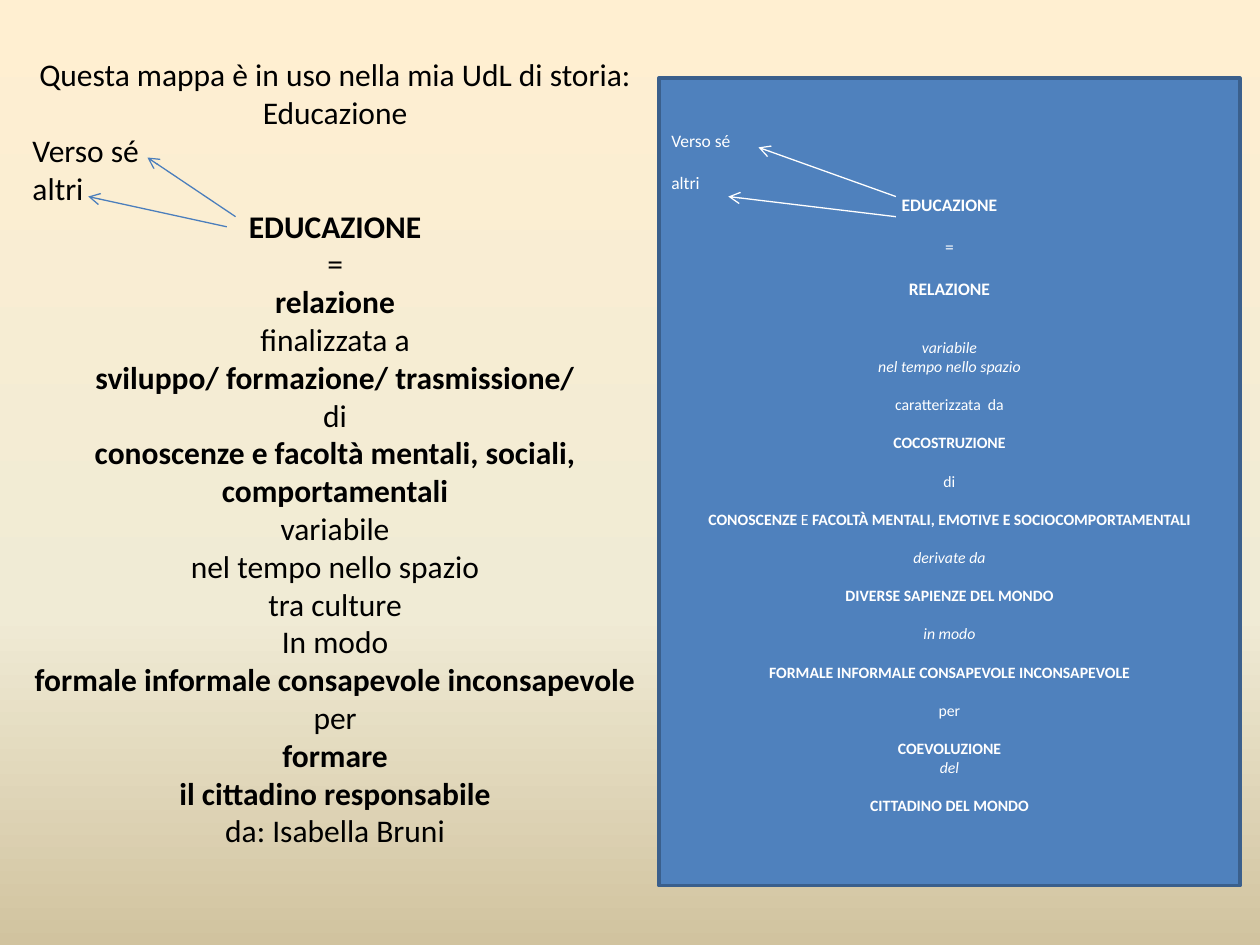
from copy import deepcopy
from dataclasses import dataclass

from lxml import etree
from pptx import Presentation
from pptx.dml.color import RGBColor
from pptx.enum.shapes import MSO_CONNECTOR, MSO_SHAPE
from pptx.enum.text import MSO_ANCHOR, MSO_AUTO_SIZE, PP_ALIGN
from pptx.oxml.ns import qn
from pptx.util import Inches, Pt

LEFT, CENTER = PP_ALIGN.LEFT, PP_ALIGN.CENTER
MIDDLE = MSO_ANCHOR.MIDDLE
FIT_SHAPE = MSO_AUTO_SIZE.SHAPE_TO_FIT_TEXT
RECTANGLE = MSO_SHAPE.RECTANGLE
STRAIGHT = MSO_CONNECTOR.STRAIGHT


@dataclass(frozen=True)
class Theme:
    font: str = "Calibri"
    ink: str = "000000"
    panel_ink: str = "FFFFFF"
    panel_fill: str = "4F81BD"
    panel_border: str = "3A5F8C"
    arrow: str = "4B7EBC"
    background: tuple = ((0, "FFEFD1"), (0.65, "F0EBD5"), (1, "D1C39F"))
    map_size: float = 18
    heading_size: float = 10
    detail_size: float = 9
    heading_gap: float = 12.2
    detail_gap: float = 11
    section_gap: float = 22


THEME = Theme()


@dataclass(frozen=True)
class Line:
    text: str
    bold: bool = False
    italic: bool = False
    align: PP_ALIGN = CENTER
    size: float = THEME.map_size
    gap: float = 0
    light: str = ""  # fragment of a bold line set in regular weight


@dataclass(frozen=True)
class Arrow:
    start: tuple[float, float]
    end: tuple[float, float]
    color: str


def heading(text: str, gap: float = THEME.heading_gap, **style) -> Line:
    return Line(text, size=THEME.heading_size, gap=gap, **style)


def detail(text: str, gap: float = THEME.detail_gap, **style) -> Line:
    return Line(text, size=THEME.detail_size, gap=gap, **style)


MAP_LINES = [
    Line("Questa mappa è in uso nella mia UdL di storia: Educazione"),
    Line("Verso sé", align=LEFT),
    Line("altri", align=LEFT),
    Line("EDUCAZIONE", bold=True),
    Line("="),
    Line("relazione", bold=True),
    Line("finalizzata a"),
    Line("sviluppo/ formazione/ trasmissione/", bold=True),
    Line("di"),
    Line("conoscenze e facoltà mentali, sociali, comportamentali", bold=True),
    Line("variabile"),
    Line("nel tempo nello spazio"),
    Line("tra culture"),
    Line("In modo"),
    Line("formale informale consapevole inconsapevole", bold=True),
    Line("per"),
    Line("formare", bold=True),
    Line("il cittadino responsabile", bold=True),
    Line("da: Isabella Bruni"),
]

PANEL_LINES = [
    heading("Verso sé", gap=0, align=LEFT),
    heading("altri", align=LEFT),
    heading("EDUCAZIONE", gap=0, bold=True),
    heading("="),
    heading("RELAZIONE", bold=True),
    detail("variabile", gap=THEME.section_gap, italic=True),
    detail("nel tempo nello spazio", gap=0, italic=True),
    detail("caratterizzata  da"),
    detail("COCOSTRUZIONE", bold=True),
    detail("di"),
    detail("CONOSCENZE E FACOLTÀ MENTALI, EMOTIVE E SOCIOCOMPORTAMENTALI",
           bold=True, light="E "),
    detail("derivate da", italic=True),
    detail("DIVERSE SAPIENZE DEL MONDO", bold=True),
    detail("in modo", italic=True),
    detail("FORMALE INFORMALE CONSAPEVOLE INCONSAPEVOLE", bold=True),
    detail("per"),
    detail("COEVOLUZIONE", bold=True),
    detail("del", gap=0, italic=True),
    detail("CITTADINO DEL MONDO", bold=True),
]

ARROWS = [
    Arrow((7.11, 1.56), (6.02, 1.17), THEME.panel_ink),
    Arrow((7.11, 1.72), (5.78, 1.56), THEME.panel_ink),
    Arrow((1.87, 1.72), (1.17, 1.25), THEME.arrow),
    Arrow((1.8, 1.8), (0.7, 1.56), THEME.arrow),
]


def rgb(color: str) -> RGBColor:
    return RGBColor.from_string(color)


def paint_background(slide) -> None:
    fill = slide.background.fill
    fill.gradient()
    fill.gradient_angle = 270
    stop_list = next(slide.element.iter(qn("a:gsLst")))
    stop_list.append(deepcopy(stop_list[-1]))
    for stop, (position, color) in zip(fill.gradient_stops, THEME.background):
        stop.position = position
        stop.color.rgb = rgb(color)


def write_lines(frame, lines: list[Line], color: str) -> None:
    frame.word_wrap = True
    for index, line in enumerate(lines):
        paragraph = frame.add_paragraph() if index else frame.paragraphs[0]
        paragraph.alignment = line.align
        paragraph.space_before = Pt(line.gap)
        font = paragraph.font
        font.name, font.size = THEME.font, Pt(line.size)
        font.italic = line.italic
        font.color.rgb = rgb(color)
        if line.light:
            before, light, after = line.text.partition(" " + line.light)
            for text, bold in ((before + " ", True), (light[1:], False), (after, True)):
                run = paragraph.add_run()
                run.text, run.font.bold = text, bold
        else:
            font.bold = line.bold
            paragraph.add_run().text = line.text


def draw_arrow(slide, arrow: Arrow) -> None:
    points = [Inches(value) for value in arrow.start + arrow.end]
    connector = slide.shapes.add_connector(STRAIGHT, *points)
    connector.line.color.rgb = rgb(arrow.color)
    connector.line.width = Pt(0.75)
    outline = connector.line._get_or_add_ln()
    etree.SubElement(outline, qn("a:tailEnd"), type="arrow")
    etree.SubElement(connector.element.spPr, qn("a:effectLst"))


def main() -> None:
    presentation = Presentation()
    presentation.slide_width, presentation.slide_height = Inches(10), Inches(7.5)
    slide = presentation.slides.add_slide(presentation.slide_layouts[6])
    paint_background(slide)

    # Map in use
    current_map = slide.shapes.add_textbox(
        Inches(0.16), Inches(0.39), Inches(5), Inches(6.46))
    write_lines(current_map.text_frame, MAP_LINES, THEME.ink)
    current_map.text_frame.auto_size = FIT_SHAPE

    # Revised map panel
    panel = slide.shapes.add_shape(
        RECTANGLE, Inches(5.23), Inches(0.62), Inches(4.61), Inches(6.41))
    panel.shadow.inherit = False
    panel.fill.solid()
    panel.fill.fore_color.rgb = rgb(THEME.panel_fill)
    panel.line.color.rgb = rgb(THEME.panel_border)
    panel.line.width = Pt(2)
    panel.text_frame.vertical_anchor = MIDDLE
    panel.text_frame.margin_bottom = Inches(0.2)
    write_lines(panel.text_frame, PANEL_LINES, THEME.panel_ink)

    # Arrows from education to self and others
    for arrow in ARROWS:
        draw_arrow(slide, arrow)

    presentation.save("out.pptx")


if __name__ == "__main__":
    main()
